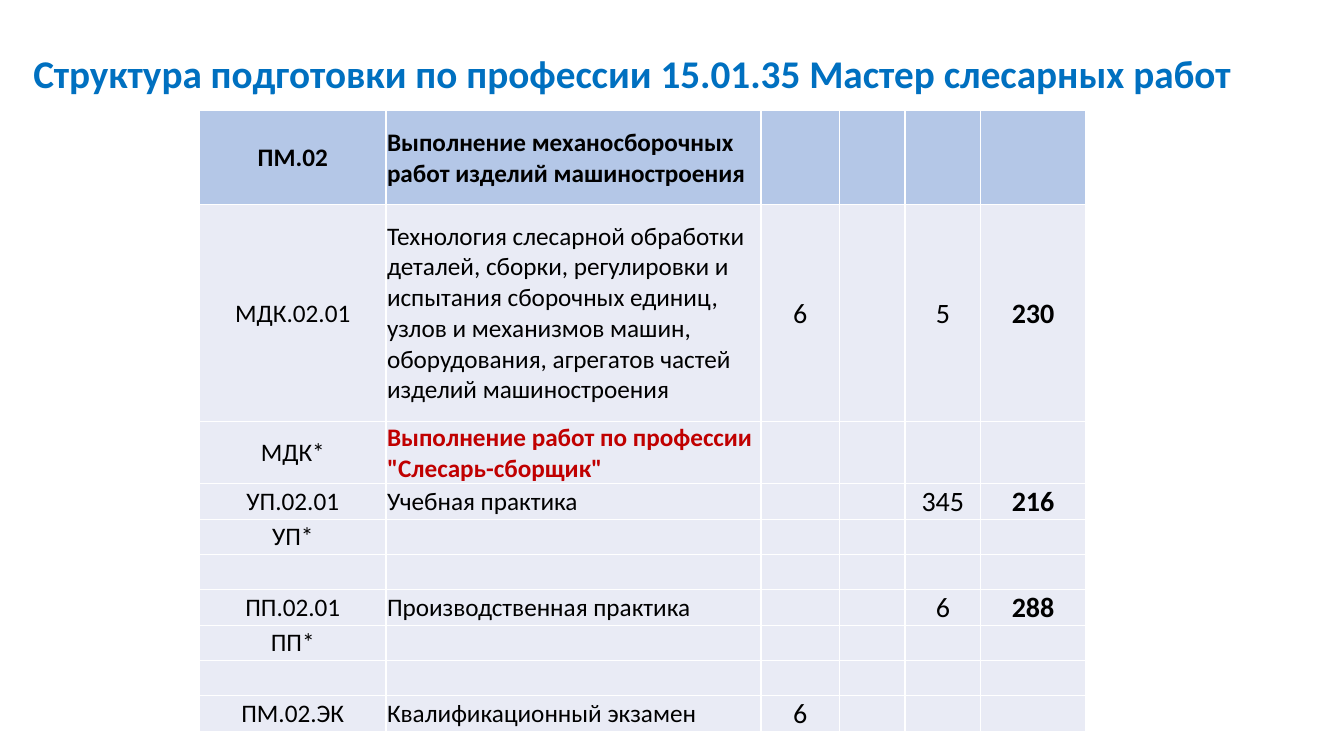
from lxml import etree
from pptx import Presentation
from pptx.dml.color import RGBColor
from pptx.enum.text import MSO_ANCHOR, PP_ALIGN
from pptx.oxml.ns import qn
from pptx.util import Pt

MIDDLE = MSO_ANCHOR.MIDDLE
LEFT, CENTER = PP_ALIGN.LEFT, PP_ALIGN.CENTER

FONT = "Calibri"
BLACK, RED, BLUE, WHITE = "000000", "C00000", "0070C0", "FFFFFF"
HEADER_FILL, ROW_FILL = "B4C7E7", "E9EBF5"

TITLE = "Структура подготовки по профессии 15.01.35 Мастер слесарных работ"
COL_WIDTHS = [133.2, 267.84, 56.16, 46.8, 54, 74.88]
LINE_HEIGHT = 25.25
ROWS = [
    (66.96, ["ПМ.02", "Выполнение механосборочных работ изделий машиностроения"]),
    (154.8, ["МДК.02.01",
             "Технология слесарной обработки деталей, сборки, регулировки и "
             "испытания сборочных единиц, узлов и механизмов машин, "
             "оборудования, агрегатов частей изделий машиностроения",
             "6", "", "5", "230"]),
    (44.64, ["МДК*", 'Выполнение работ по профессии "Слесарь-сборщик"']),
    (LINE_HEIGHT, ["УП.02.01", "Учебная практика", "", "", "345", "216"]),
    (LINE_HEIGHT, ["УП*"]),
    (LINE_HEIGHT, []),
    (LINE_HEIGHT, ["ПП.02.01", "Производственная практика", "", "", "6", "288"]),
    (LINE_HEIGHT, ["ПП*"]),
    (LINE_HEIGHT, []),
    (LINE_HEIGHT, ["ПM.02.ЭК", "Квалификационный экзамен", "6"]),
]
HEADER_ROW, WORK_ROW = 0, 2
NAME_COL, TOTAL_COL = 1, 5


def rgb(color):
    return RGBColor.from_string(color)


def add_run(p, text, size, color=BLACK, bold=False):
    r = p.add_run()
    r.text = text
    r.font.name = FONT
    r.font.size = Pt(size)
    r.font.bold = bold
    r.font.color.rgb = rgb(color)


def add_title(s, left, top, width, height):
    sp = s.shapes.title
    sp.left, sp.top, sp.width, sp.height = Pt(left), Pt(top), Pt(width), Pt(height)
    tf = sp.text_frame
    tf.word_wrap = True
    tf.vertical_anchor = MIDDLE
    p = tf.paragraphs[0]
    p.alignment = LEFT
    p.line_spacing = 0.9
    add_run(p, TITLE, 28, BLUE, True)


def set_borders(cell, color, width):
    tc_pr = cell._tc.get_or_add_tcPr()
    for side in ("a:lnL", "a:lnR", "a:lnT", "a:lnB"):
        ln = etree.SubElement(tc_pr, qn(side), w=str(Pt(width)))
        fill = etree.SubElement(ln, qn("a:solidFill"))
        etree.SubElement(fill, qn("a:srgbClr"), val=color)


def fill_cell(cell, row, col, text):
    set_borders(cell, WHITE, 1)
    cell.fill.solid()
    cell.fill.fore_color.rgb = rgb(HEADER_FILL if row == HEADER_ROW else ROW_FILL)
    cell.vertical_anchor = MIDDLE
    cell.margin_left = cell.margin_right = cell.margin_top = Pt(0.72)
    cell.margin_bottom = 0
    if not text:
        return
    p = cell.text_frame.paragraphs[0]
    p.alignment = LEFT if col == NAME_COL else CENTER
    highlighted = (row, col) == (WORK_ROW, NAME_COL)
    bold = row == HEADER_ROW or col == TOTAL_COL or highlighted
    add_run(p, text, 20 if col > NAME_COL else 18, RED if highlighted else BLACK, bold)


def add_module_table(s, left, top):
    height = sum(h for h, _ in ROWS)
    frame = s.shapes.add_table(len(ROWS), len(COL_WIDTHS), Pt(left), Pt(top),
                               Pt(sum(COL_WIDTHS)), Pt(height))
    table = frame.table
    table.first_row = False
    table.horz_banding = False
    for col, width in enumerate(COL_WIDTHS):
        table.columns[col].width = Pt(width)
    for row, (row_height, texts) in enumerate(ROWS):
        table.rows[row].height = Pt(row_height)
        padded = texts + [""] * (len(COL_WIDTHS) - len(texts))
        for col, text in enumerate(padded):
            fill_cell(table.cell(row, col), row, col, text)


def main():
    prs = Presentation()
    prs.slide_width, prs.slide_height = Pt(960), Pt(540)
    s = prs.slides.add_slide(prs.slide_layouts[5])
    add_module_table(s, 142.56, 79.2)
    add_title(s, 16.56, 28.8, 918.72, 50.4)
    prs.save("out.pptx")


if __name__ == "__main__":
    main()
